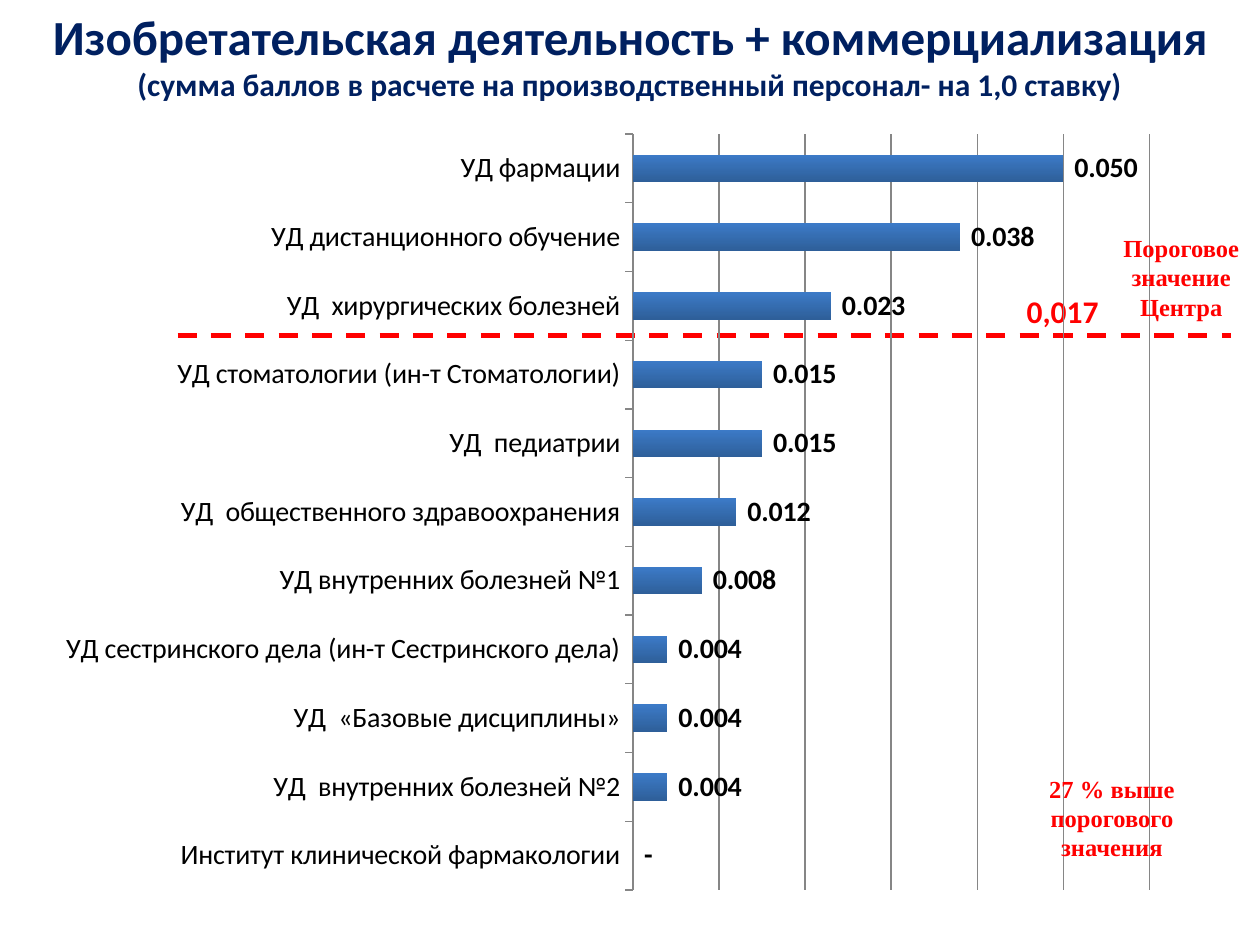
from dataclasses import dataclass

from lxml.etree import SubElement
from pptx import Presentation
from pptx.chart.data import CategoryChartData
from pptx.dml.color import RGBColor as RGB
from pptx.enum.chart import XL_CHART_TYPE as ChartType, XL_LABEL_POSITION as LabelPos
from pptx.enum.chart import XL_TICK_LABEL_POSITION as TickLabelPos, XL_TICK_MARK as TickMark
from pptx.enum.dml import MSO_LINE as Dash
from pptx.enum.shapes import MSO_CONNECTOR as Connector
from pptx.enum.text import MSO_ANCHOR as Anchor, PP_ALIGN as Align
from pptx.oxml.ns import qn
from pptx.util import Inches, Pt


@dataclass(frozen=True)
class Theme:
    sans: str = "Calibri"
    serif: str = "Times New Roman"
    navy: RGB = RGB(0x00, 0x20, 0x60)
    red: RGB = RGB(0xFF, 0x00, 0x00)
    black: RGB = RGB(0x00, 0x00, 0x00)
    grid: RGB = RGB(0x86, 0x86, 0x86)
    bar_dark: RGB = RGB(0x2E, 0x5F, 0x99)
    bar_light: RGB = RGB(0x3C, 0x7A, 0xC7)
    title: int = 28
    subtitle: int = 18
    label: int = 16
    note: int = 14


T = Theme()
NUMBER_FORMAT = '_-* #,##0.000_-;\\-* #,##0.000_-;_-* "-"?'
SCORES = [
    ("Институт клинической фармакологии", 0),
    ("УД  внутренних болезней №2", 0.004),
    ("УД  «Базовые дисциплины»", 0.004),
    ("УД сестринского дела (ин-т Сестринского дела)", 0.004),
    ("УД внутренних болезней №1", 0.008),
    ("УД  общественного здравоохранения", 0.012),
    ("УД  педиатрии", 0.015),
    ("УД стоматологии (ин-т Стоматологии)", 0.015),
    ("УД  хирургических болезней", 0.023),
    ("УД дистанционного обучение", 0.038),
    ("УД фармации", 0.05),
]


def inches(box):
    return [Inches(v) for v in box]


def style_font(font, name, size, color, bold=False):
    font.name, font.size, font.bold = name, Pt(size), bold
    font.color.rgb = color


def write_lines(tf, lines, name, color, align):
    tf.word_wrap = True
    for i, (text, size) in enumerate(lines):
        p = tf.paragraphs[0] if i == 0 else tf.add_paragraph()
        p.alignment = align
        r = p.add_run()
        r.text = text
        style_font(r.font, name, size, color, True)


def add_title(s, box):
    sp = s.shapes.title
    sp.left, sp.top, sp.width, sp.height = inches(box)
    sp.text_frame.vertical_anchor = Anchor.TOP
    write_lines(sp.text_frame, [
        ("Изобретательская деятельность + коммерциализация", T.title),
        ("(сумма баллов в расчете на производственный персонал- на 1,0 ставку)", T.subtitle),
    ], T.sans, T.navy, Align.CENTER)


def add_note(s, box, lines, name=T.serif, size=T.note, align=Align.CENTER):
    tf = s.shapes.add_textbox(*inches(box)).text_frame
    write_lines(tf, [(text, size) for text in lines], name, T.red, align)


def add_threshold(s, left, right, y):
    line = s.shapes.add_connector(Connector.STRAIGHT, *inches((left, y, right, y)))
    line.line.color.rgb = T.red
    line.line.width = Pt(2.75)
    line.line.dash_style = Dash.DASH
    SubElement(line._element.spPr, qn("a:effectLst"))


def set_plot_box(chart, x, y, w, h):
    plot_area = chart._chartSpace.chart.plotArea
    layout = plot_area.find(qn("c:layout"))
    if layout is None:
        layout = SubElement(plot_area, qn("c:layout"))
        plot_area.insert(0, layout)
    manual = SubElement(layout, qn("c:manualLayout"))
    settings = [("layoutTarget", "inner"), ("xMode", "edge"), ("yMode", "edge"),
                ("x", x), ("y", y), ("w", w), ("h", h)]
    for tag, value in settings:
        SubElement(manual, qn(f"c:{tag}")).set("val", str(value))


def style_axes(chart):
    cat = chart.category_axis
    cat.major_tick_mark = TickMark.OUTSIDE
    cat.tick_label_position = TickLabelPos.LOW
    cat.format.line.color.rgb = T.grid
    style_font(cat.tick_labels.font, T.sans, T.label, T.black)
    val = chart.value_axis
    val.minimum_scale, val.maximum_scale, val.major_unit = 0, 0.06, 0.01
    val.has_major_gridlines = True
    val.major_gridlines.format.line.color.rgb = T.grid
    val.tick_labels.number_format = NUMBER_FORMAT
    val.tick_labels.number_format_is_linked = False
    val.visible = False


def style_bars(plot):
    plot.gap_width = 150
    plot.vary_by_categories = False
    fill = plot.series[0].format.fill
    fill.gradient()
    fill.gradient_angle = 90
    for stop, color in zip(fill.gradient_stops, (T.bar_dark, T.bar_light)):
        stop.color.rgb = color
    labels = plot.series[0].data_labels
    labels.show_value = True
    labels.position = LabelPos.OUTSIDE_END
    labels.number_format = NUMBER_FORMAT
    labels.number_format_is_linked = False
    style_font(labels.font, T.sans, T.label, T.black, True)


def add_score_chart(s, box):
    data = CategoryChartData(number_format=NUMBER_FORMAT)
    data.categories = [name for name, _ in SCORES]
    data.add_series("Series 1", [score for _, score in SCORES])
    chart = s.shapes.add_chart(ChartType.BAR_CLUSTERED, *inches(box), data).chart
    chart.has_title = chart.has_legend = False
    style_font(chart.font, T.sans, 10, T.black)
    style_axes(chart)
    style_bars(chart.plots[0])
    set_plot_box(chart, 0.52, 0.02, 0.46, 0.96)


def main():
    prs = Presentation()
    prs.slide_width, prs.slide_height = Inches(10), Inches(7.5)
    s = prs.slides.add_slide(prs.slide_layouts[5])
    add_title(s, (0, 0, 10, 0.91))
    add_threshold(s, 1.41, 9.77, 2.66)
    add_note(s, (8.05, 2.27, 1.33, 0.4), ["0,017"], T.sans, T.subtitle, Align.LEFT)
    add_score_chart(s, (0.39, 0.94, 8.91, 6.25))
    add_note(s, (8.75, 1.8, 1.25, 0.81), ["Пороговое значение Центра"])
    add_note(s, (8.2, 6.09, 1.25, 0.81), ["27 % выше", "порогового значения"])
    prs.save("out.pptx")


if __name__ == "__main__":
    main()
